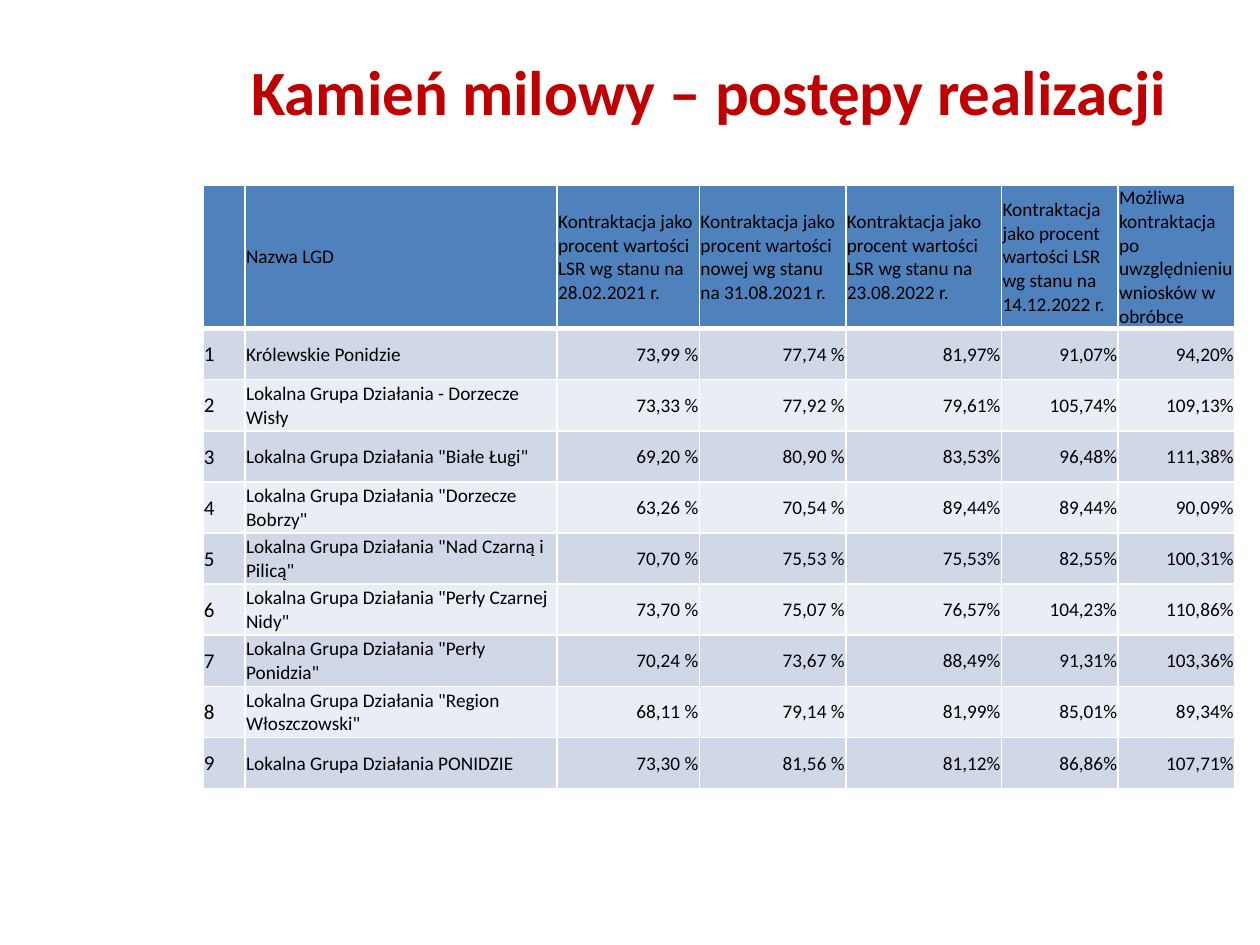
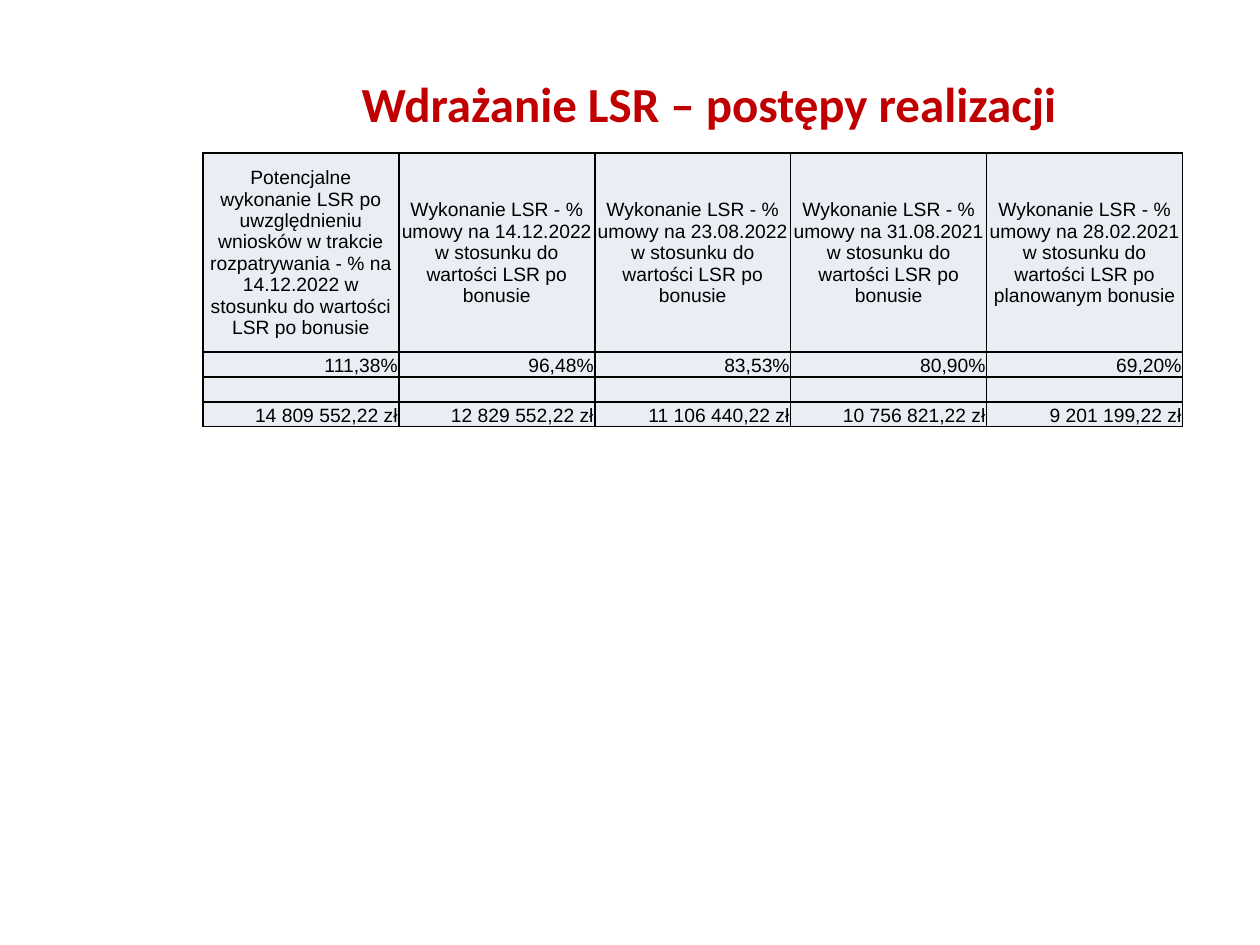
from lxml.etree import SubElement
from pptx import Presentation
from pptx.dml.color import RGBColor
from pptx.enum.text import MSO_ANCHOR, PP_ALIGN
from pptx.oxml.ns import qn
from pptx.util import Cm, Pt

# Shared look
RED, BLACK, WHITE = "C00000", "000000", "FFFFFF"
BLUE, DARK, LIGHT = "4F81BD", "D0D8E8", "E9EDF4"
LEFT = 4.09
INSET = Cm(0.02)

# Progress of each group
HEADS = [
    "",
    "Nazwa LGD",
    "Kontraktacja jako procent wartości LSR wg stanu na 28.02.2021 r.",
    "Kontraktacja jako procent wartości nowej wg stanu na 31.08.2021 r.",
    "Kontraktacja jako procent wartości LSR wg stanu na 23.08.2022 r.",
    "Kontraktacja jako procent wartości LSR wg stanu na 14.12.2022 r.",
    "Możliwa kontraktacja po uwzględnieniu wniosków w obróbce",
]
GROUPS = [
    ["Królewskie Ponidzie", "73,99 %", "77,74 %", "81,97%", "91,07%", "94,20%"],
    ["Lokalna Grupa Działania - Dorzecze Wisły",
     "73,33 %", "77,92 %", "79,61%", "105,74%", "109,13%"],
    ['Lokalna Grupa Działania "Białe Ługi"',
     "69,20 %", "80,90 %", "83,53%", "96,48%", "111,38%"],
    ['Lokalna Grupa Działania "Dorzecze Bobrzy"',
     "63,26 %", "70,54 %", "89,44%", "89,44%", "90,09%"],
    ['Lokalna Grupa Działania "Nad Czarną i Pilicą"',
     "70,70 %", "75,53 %", "75,53%", "82,55%", "100,31%"],
    ['Lokalna Grupa Działania "Perły Czarnej Nidy"',
     "73,70 %", "75,07 %", "76,57%", "104,23%", "110,86%"],
    ['Lokalna Grupa Działania "Perły Ponidzia"',
     "70,24 %", "73,67 %", "88,49%", "91,31%", "103,36%"],
    ['Lokalna Grupa Działania "Region Włoszczowski"',
     "68,11 %", "79,14 %", "81,99%", "85,01%", "89,34%"],
    ["Lokalna Grupa Działania PONIDZIE",
     "73,30 %", "81,56 %", "81,12%", "86,86%", "107,71%"],
]

# Strategy totals: date, base of the ratio, percent, amount
TOTALS = [
    ("14.12.2022", "po bonusie", "96,48%", "12 829 552,22 zł"),
    ("23.08.2022", "po bonusie", "83,53%", "11 106 440,22 zł"),
    ("31.08.2021", "po bonusie", "80,90%", "10 756 821,22 zł"),
    ("28.02.2021", "po planowanym bonusie", "69,20%", "9 201 199,22 zł"),
]
OUTLOOK = ("Potencjalne wykonanie LSR po uwzględnieniu wniosków w trakcie "
           "rozpatrywania - % na 14.12.2022 w stosunku do wartości LSR po bonusie")


def tint(code):
    return RGBColor.from_string(code)


def style(font, name, size, color, bold=False):
    font.name, font.size, font.bold = name, Pt(size), bold
    font.color.rgb = tint(color)


def add_page(deck, text, size, top, height):
    """Add a slide with its red title."""
    page = deck.slides.add_slide(deck.slide_layouts[5])
    title = page.shapes.title
    title.left, title.top = Cm(3.38), Cm(top)
    title.width, title.height = Cm(21.82), Cm(height)
    frame = title.text_frame
    frame.text = text
    frame.vertical_anchor = MSO_ANCHOR.MIDDLE
    line = frame.paragraphs[0]
    line.alignment = PP_ALIGN.CENTER
    style(line.runs[0].font, "Calibri", size, RED, True)
    return page


def add_grid(page, top, widths, heights):
    """Add a plain table with the given column widths and row heights."""
    shape = page.shapes.add_table(len(heights), len(widths), Cm(LEFT), Cm(top),
                                  Cm(sum(widths)), Cm(sum(heights)))
    grid = shape.table
    grid.first_row = grid.horz_banding = False
    for col, width in zip(grid.columns, widths):
        col.width = Cm(width)
    for row, height in zip(grid.rows, heights):
        row.height = Cm(height)
    return grid


def edge(cell, color, top=1, bottom=1):
    """Draw the four borders of a cell."""
    props = cell._tc.get_or_add_tcPr()
    for side, width in zip("LRTB", (1, 1, top, bottom)):
        line = SubElement(props, qn(f"a:ln{side}"), w=str(Pt(width)))
        fill = SubElement(line, qn("a:solidFill"))
        SubElement(fill, qn("a:srgbClr"), val=color)


def fill_cell(cell, text, name, size, back, align, anchor=MSO_ANCHOR.MIDDLE):
    cell.fill.solid()
    cell.fill.fore_color.rgb = tint(back)
    cell.margin_left = cell.margin_right = cell.margin_top = INSET
    cell.margin_bottom = 0
    cell.vertical_anchor = anchor
    line = cell.text_frame.paragraphs[0]
    line.alignment = align
    if text:
        line.text = text
        style(line.runs[0].font, name, size, BLACK)
    else:
        # Keeps an empty row as low as the others
        SubElement(line._p, qn("a:endParaRPr"), sz=str(size * 100))


def add_groups(page):
    widths = [0.85, 6.29, 2.87, 2.95, 3.14, 2.35, 2.35]
    grid = add_grid(page, 3.73, widths, [2.87] + [1.03] * len(GROUPS))
    rows = [HEADS] + [[str(n), *group] for n, group in enumerate(GROUPS, 1)]
    for r, row in enumerate(rows):
        back = BLUE if r == 0 else DARK if r % 2 else LIGHT
        for c, text in enumerate(row):
            cell = grid.cell(r, c)
            edge(cell, WHITE, 3 if r == 1 else 1, 3 if r == 0 else 1)
            size = 12 if r and c == 0 else 11
            align = PP_ALIGN.RIGHT if r and c > 1 else PP_ALIGN.LEFT
            fill_cell(cell, text, "Calibri", size, back, align)


def add_totals(page):
    cols = [(OUTLOOK, "111,38%", "", "14 809 552,22 zł")]
    for date, base, share, amount in TOTALS:
        head = f"Wykonanie LSR - % umowy na {date} w stosunku do wartości LSR {base}"
        cols.append((head, share, "", amount))
    grid = add_grid(page, 3.08, [3.95] * len(cols), [4.02] + [0.5] * 3)
    for c, col in enumerate(cols):
        for r, text in enumerate(col):
            cell = grid.cell(r, c)
            edge(cell, BLACK)
            align = PP_ALIGN.RIGHT if r else PP_ALIGN.CENTER
            anchor = MSO_ANCHOR.BOTTOM if r else MSO_ANCHOR.MIDDLE
            fill_cell(cell, text, "Arial", 11, LIGHT, align, anchor)


def main():
    deck = Presentation()
    deck.slide_width, deck.slide_height = Cm(25.4), Cm(19.05)
    add_groups(add_page(deck, "Kamień milowy – postępy realizacji", 36, 0.33, 3))
    add_totals(add_page(deck, "Wdrażanie LSR – postępy realizacji", 28, 0.2, 3.73))
    deck.save("out.pptx")


if __name__ == "__main__":
    main()
